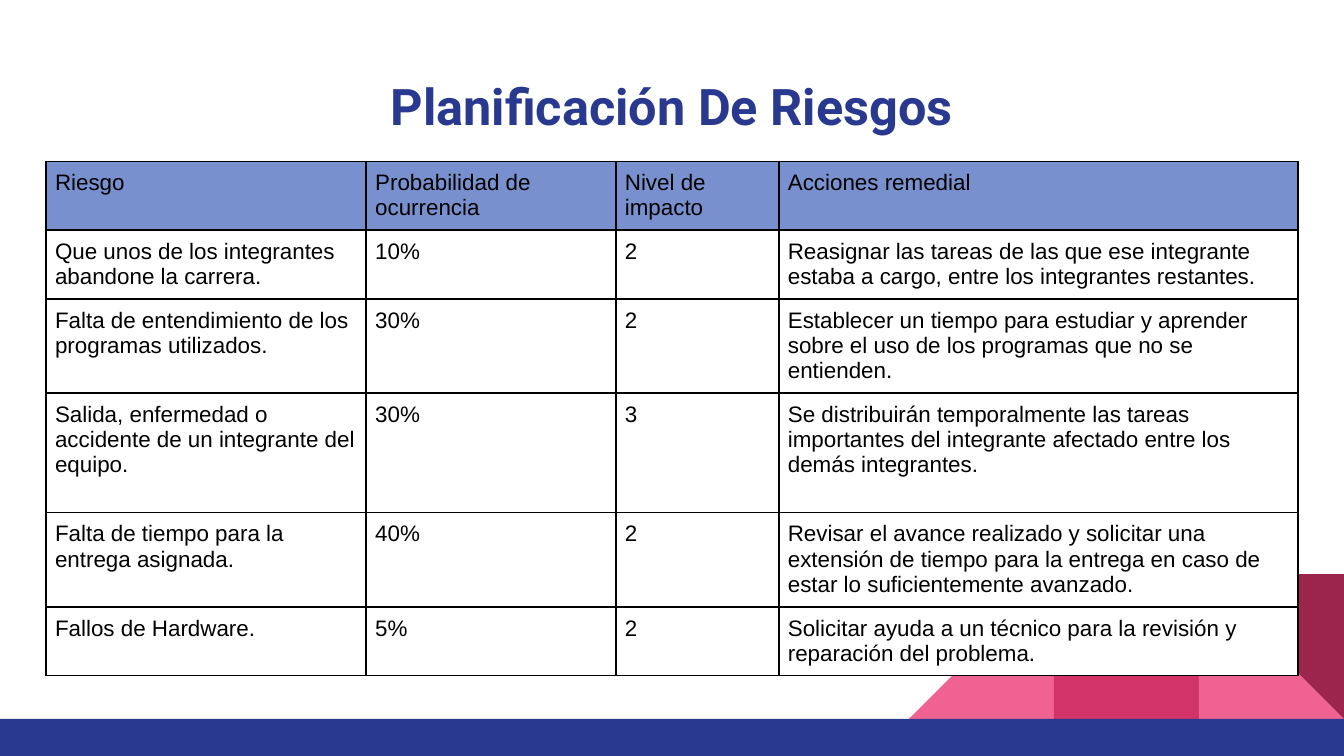
import lxml.etree
import pptx
import pptx.dml.color
import pptx.enum.shapes
import pptx.enum.text
import pptx.oxml.ns
import pptx.util

Cm = pptx.util.Cm
Pt = pptx.util.Pt
Shape = pptx.enum.shapes.MSO_SHAPE

PAGE_WIDTH, PAGE_HEIGHT = 25.4, 14.29
BAR_TOP = 13.59
TILE = 2.74

COLUMN_WIDTHS = [6.05, 4.72, 3.08, 9.81]
ROW_HEIGHTS = [1.3, 1.3, 1.78, 2.26, 1.78, 1.3]
RISKS = [
    ["Riesgo", "Probabilidad de ocurrencia", "Nivel de impacto", "Acciones remedial"],
    ["Que unos de los integrantes abandone la carrera.", "10%", "2",
     "Reasignar las tareas de las que ese integrante estaba a cargo, "
     "entre los integrantes restantes."],
    ["Falta de entendimiento de los programas utilizados.", "30%", "2",
     "Establecer un tiempo para estudiar y aprender sobre el uso de los "
     "programas que no se entienden."],
    ["Salida, enfermedad o accidente de un integrante del equipo.", "30%", "3",
     "Se distribuirán temporalmente las tareas importantes del integrante "
     "afectado entre los demás integrantes."],
    ["Falta de tiempo para la entrega asignada.", "40%", "2",
     "Revisar el avance realizado y solicitar una extensión de tiempo para "
     "la entrega en caso de estar lo suficientemente avanzado."],
    ["Fallos de Hardware.", "5%", "2",
     "Solicitar ayuda a un técnico para la revisión y reparación del problema."],
]

TITLE_FONT = {"name": "Roboto", "size": Pt(27), "bold": True}
CELL_FONT = {"name": "Arial", "size": Pt(12), "bold": False}
CELL_MARGINS = {f"margin_{side}": Cm(0.17) for side in ("left", "right", "top", "bottom")}


def set_attributes(target, values):
    for name, value in values.items():
        setattr(target, name, value)


def set_color(color_format, color):
    color_format.rgb = pptx.dml.color.RGBColor.from_string(color)


def set_fill(target, color):
    target.fill.solid()
    set_color(target.fill.fore_color, color)


def write_text(frame, text, font_values, color):
    para = frame.paragraphs[0]
    span = para.add_run()
    span.text = text
    set_attributes(span.font, font_values)
    set_color(span.font.color, color)
    return para


def add_block(page, kind, left, top, width, height, color, rotation=0, flipped=False):
    block = page.shapes.add_shape(kind, Cm(left), Cm(top), Cm(width), Cm(height))
    block.shadow.inherit = False
    block.rotation = rotation
    set_fill(block, color)
    block.line.fill.background()
    if flipped:
        block.element.spPr.xfrm.set("flipH", "1")


def add_decoration(page):
    tiles = [
        (3, Shape.RIGHT_TRIANGLE, "F06292", 0, True),
        (2, Shape.RECTANGLE, "D23369", 0, False),
        (1, Shape.RIGHT_TRIANGLE, "F06292", 0, False),
        (1, Shape.RIGHT_TRIANGLE, "9C254D", 180, False),
    ]
    for steps_from_right, kind, color, rotation, flipped in tiles:
        add_block(page, kind, PAGE_WIDTH - steps_from_right * TILE, BAR_TOP - TILE,
                  TILE, TILE, color, rotation, flipped)
    add_block(page, Shape.RECTANGLE, 0, BAR_TOP, PAGE_WIDTH, PAGE_HEIGHT - BAR_TOP, "2A3990")


def fill_title(page, text):
    title = page.shapes.title
    set_attributes(title, {"left": Cm(0.86), "top": Cm(1.14),
                           "width": Cm(23.67), "height": Cm(1.68)})
    frame = title.text_frame
    set_attributes(frame, {
        "margin_left": Cm(0.25), "margin_right": Cm(0.25),
        "margin_top": Cm(0.25), "margin_bottom": Cm(0.25),
        "word_wrap": True, "auto_size": pptx.enum.text.MSO_AUTO_SIZE.NONE,
        "vertical_anchor": pptx.enum.text.MSO_ANCHOR.BOTTOM,
    })
    para = write_text(frame, text, TITLE_FONT, "2A3990")
    para.alignment = pptx.enum.text.PP_ALIGN.CENTER


def add_borders(cell, color, width):
    """Draw all four cell borders; they must come before the fill in tcPr."""
    properties = cell._tc.get_or_add_tcPr()
    qn = pptx.oxml.ns.qn
    for position, side in enumerate(("lnL", "lnR", "lnT", "lnB")):
        border = lxml.etree.Element(qn(f"a:{side}"), w=str(int(width)))
        fill = lxml.etree.SubElement(border, qn("a:solidFill"))
        lxml.etree.SubElement(fill, qn("a:srgbClr"), val=color)
        properties.insert(position, border)


def add_risk_table(page):
    frame = page.shapes.add_table(
        len(RISKS), len(COLUMN_WIDTHS), Cm(0.87), Cm(3.05),
        Cm(sum(COLUMN_WIDTHS)), Cm(sum(ROW_HEIGHTS)))
    table = frame.table
    set_attributes(table, {"first_row": False, "horz_banding": False})
    for column, width in zip(table.columns, COLUMN_WIDTHS):
        column.width = Cm(width)
    for row, height in zip(table.rows, ROW_HEIGHTS):
        row.height = Cm(height)
    for row_index, texts in enumerate(RISKS):
        for column_index, text in enumerate(texts):
            cell = table.cell(row_index, column_index)
            set_attributes(cell, CELL_MARGINS)
            write_text(cell.text_frame, text, CELL_FONT, "000000")
            set_fill(cell, "FFFFFF" if row_index else "7890CD")
            add_borders(cell, "000000", Pt(1))


def main():
    deck = pptx.Presentation()
    set_attributes(deck, {"slide_width": Cm(PAGE_WIDTH), "slide_height": Cm(PAGE_HEIGHT)})
    title_only = deck.slide_layouts[5]
    page = deck.slides.add_slide(title_only)
    add_decoration(page)
    fill_title(page, "Planificación De Riesgos")
    add_risk_table(page)
    deck.save("out.pptx")


if __name__ == "__main__":
    main()
